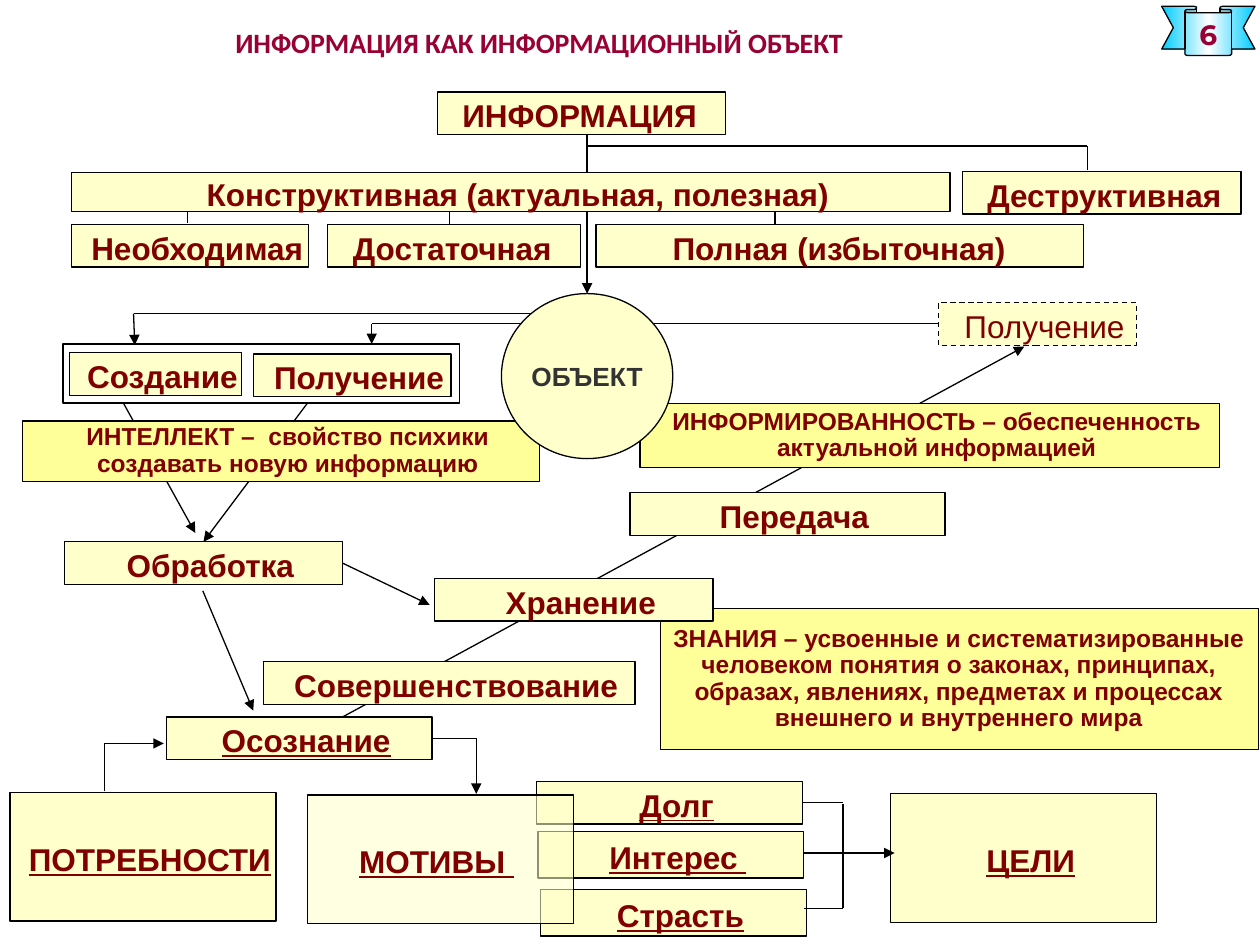
from copy import deepcopy
from dataclasses import dataclass

from lxml import etree
from pptx import Presentation
from pptx.dml.color import RGBColor
from pptx.enum.dml import MSO_LINE
from pptx.enum.shapes import MSO_CONNECTOR, MSO_SHAPE
from pptx.enum.text import MSO_ANCHOR, PP_ALIGN
from pptx.oxml.ns import qn
from pptx.util import Inches, Pt

RECTANGLE, OVAL, RIBBON = MSO_SHAPE.RECTANGLE, MSO_SHAPE.OVAL, MSO_SHAPE.DOWN_RIBBON
STRAIGHT, DASH = MSO_CONNECTOR.STRAIGHT, MSO_LINE.DASH
CENTER, LEFT, MIDDLE = PP_ALIGN.CENTER, PP_ALIGN.LEFT, MSO_ANCHOR.MIDDLE
TOP_SIDE, LEFT_SIDE, RIGHT_SIDE = 0, 1, 3


@dataclass(frozen=True)
class Theme:
    font: str = "Arial"
    title_font: str = "Calibri"
    number_font: str = "Montserrat"
    ink: str = "800000"
    accent: str = "990033"
    object_ink: str = "333333"
    line: str = "000000"
    box: str = "FFFFCC"
    definition: str = "FFFF99"
    ribbon: tuple = ("00CCFF", "FFFFFF", "00CCFF")
    heading_size: int = 16
    term_size: int = 18
    definition_size: int = 14
    object_size: int = 15
    line_width: float = 0.75


THEME = Theme()
INSETS = (0.13, 0.01, 0.02, 0.01)
DEFAULT_INSETS = (0.1, 0.05, 0.1, 0.05)
UNDERLINED = {"underline": True}
DEFINITION = {"fill": THEME.definition, "size": THEME.definition_size, "spacing": 0.9}


def shifted(right):
    return {"insets": (0.13, 0.01, right, 0.01)}


# name, text, (left, top, width, height), differences from a plain term box
BOXES = [
    ("necessary", "Необходимая", (0.57, 1.78, 1.88, 0.34), {}),
    ("sufficient", "Достаточная", (2.6, 1.78, 2.01, 0.34), shifted(0.16)),
    ("complete", "Полная (избыточная)", (4.73, 1.78, 3.87, 0.34), {"insets": (0.01, 0.01, 0.02, 0.01)}),
    ("receiving", "Получение", (2.01, 2.81, 1.57, 0.34), {}),
    ("processing", "Обработка", (0.51, 4.3, 2.21, 0.34), {}),
    ("improvement", "Совершенствование", (2.09, 5.25, 2.95, 0.34), {}),
    ("destructive", "Деструктивная", (7.64, 1.36, 2.21, 0.34), shifted(0.09)),
    ("awareness", "ИНФОРМИРОВАННОСТЬ – обеспеченность актуальной информацией",
     (5.08, 3.2, 4.6, 0.51), DEFINITION),
    ("knowledge", "ЗНАНИЯ – усвоенные и систематизированные человеком понятия о законах, "
     "принципах, образах, явлениях, предметах и процессах\nвнешнего и внутреннего мира",
     (5.24, 4.83, 4.75, 1.12), {**DEFINITION, "insets": (0.01, 0.01, 0.02, 0.01)}),
    ("information", "ИНФОРМАЦИЯ", (3.47, 0.73, 2.29, 0.34), shifted(0.16)),
    ("storage", "Хранение", (3.45, 4.59, 2.21, 0.34), {}),
    ("needs", "ПОТРЕБНОСТИ", (0.08, 6.29, 2.11, 1.02), UNDERLINED),
    ("duty", "Долг", (4.26, 6.2, 2.11, 0.34), UNDERLINED),
    ("interest", "Интерес ", (4.27, 6.6, 2.11, 0.37), UNDERLINED),
    ("goals", "ЦЕЛИ", (7.07, 6.3, 2.11, 1.02), UNDERLINED),
    ("passion", "Страсть", (4.29, 7.06, 2.11, 0.37), UNDERLINED),
    ("realization", "Осознание", (1.32, 5.69, 2.11, 0.34), UNDERLINED),
    ("motives", "МОТИВЫ ", (2.44, 6.31, 2.11, 1.02),
     {**UNDERLINED, "alpha": 56, "align": LEFT, "insets": (0.41, 0.01, 0.02, 0.01)}),
    ("intellect", "ИНТЕЛЛЕКТ –  свойство психики\nсоздавать новую информацию",
     (0.18, 3.34, 4.1, 0.48), DEFINITION),
    ("creation", "Создание", (0.55, 2.8, 1.37, 0.34), {}),
    ("frame", "", (0.5, 2.73, 3.15, 0.47), {"fill": None}),
    ("transfer", "Передача", (5, 3.91, 2.5, 0.34), {}),
    ("obtaining", "Получение", (7.45, 2.4, 1.57, 0.34), {"bold": False, "dash": DASH}),
    ("object", "ОБЪЕКТ", (3.98, 2.33, 1.36, 1.31),
     {"preset": OVAL, "size": THEME.object_size, "color": THEME.object_ink, "spacing": 1.0,
      "wrap": False, "insets": DEFAULT_INSETS}),
    ("constructive", "Конструктивная (актуальная, полезная)", (0.57, 1.37, 6.97, 0.31), {}),
]

# start, end, arrowhead, joined box at the start, joined box at the end
BACK_LINES = [
    ((2.44, 3.2), (1.61, 4.3), True, None, ("processing", TOP_SIDE)),
    ((0.98, 3.2), (1.55, 4.23), True, None, None),
    ((2.72, 5.69), (8.13, 2.75), True, None, None),
    ((1.49, 1.58), (1.49, 1.77), False, None, None),
    ((3.57, 1.61), (3.57, 1.8), False, None, None),
    ((6.15, 1.6), (6.15, 1.78), False, None, None),
    ((4.66, 0.83), (4.66, 2.33), True, None, ("object", TOP_SIDE)),
    ((7.45, 2.57), (2.95, 2.57), False, ("obtaining", LEFT_SIDE), None),
    ((1.06, 2.49), (4.29, 2.49), False, None, None),
]
FRONT_LINES = [
    ((1.06, 2.49), (1.07, 2.74), True, None, None),
    ((2.95, 2.57), (2.95, 2.73), True, None, None),
    ((2.72, 4.47), (3.41, 4.8), True, ("processing", RIGHT_SIDE), None),
    ((4.66, 1.16), (8.63, 1.16), False, None, None),
    ((8.63, 1.16), (8.63, 1.35), False, None, None),
    ((1.61, 4.69), (2.01, 5.64), True, None, None),
    ((0.83, 6.28), (0.83, 5.9), False, None, None),
    ((0.83, 5.9), (1.3, 5.9), True, None, None),
    ((3.43, 5.86), (3.78, 5.86), False, ("realization", RIGHT_SIDE), None),
    ((3.78, 5.86), (3.78, 6.3), True, None, None),
    ((6.69, 6.38), (6.69, 7.21), False, None, None),
    ((6.37, 6.37), (6.69, 6.37), False, ("duty", RIGHT_SIDE), None),
    ((6.38, 6.77), (7.1, 6.77), True, None, None),
    ((6.38, 7.21), (6.69, 7.21), False, None, None),
]


def rgb(value):
    return RGBColor.from_string(value)


def set_attributes(target, values):
    for name, value in values.items():
        setattr(target, name, value)


def write_text(shape, text, size, font=THEME.font, color=THEME.ink, bold=True, underline=False,
               align=CENTER, spacing=1.0, insets=DEFAULT_INSETS, wrap=True):
    left, top, right, bottom = map(Inches, insets)
    frame = shape.text_frame
    set_attributes(frame, {"margin_left": left, "margin_top": top, "margin_right": right,
                           "margin_bottom": bottom, "vertical_anchor": MIDDLE,
                           "word_wrap": wrap, "text": text})
    for paragraph in frame.paragraphs:
        set_attributes(paragraph, {"alignment": align, "line_spacing": spacing})
        for run in paragraph.runs:
            set_attributes(run.font, {"name": font, "size": Pt(size), "bold": bold,
                                      "underline": underline})
            run.font.color.rgb = rgb(color)


def style_line(line):
    line.color.rgb = rgb(THEME.line)
    line.width = Pt(THEME.line_width)


def add_box(slide, text, place, preset=RECTANGLE, fill=THEME.box, alpha=None, dash=None,
            size=THEME.term_size, spacing=1.1, insets=INSETS, **text_format):
    shape = slide.shapes.add_shape(preset, *map(Inches, place))
    shape.shadow.inherit = False
    style_line(shape.line)
    if dash:
        shape.line.dash_style = dash
    if fill:
        shape.fill.solid()
        shape.fill.fore_color.rgb = rgb(fill)
    else:
        shape.fill.background()
    if alpha:
        color = shape._element.spPr.find(qn("a:solidFill"))[0]
        etree.SubElement(color, qn("a:alpha"), val=str(alpha * 1000))
    if text:
        write_text(shape, text, size, spacing=spacing, insets=insets, **text_format)
    return shape


def add_line(slide, start, end, arrow):
    connector = slide.shapes.add_connector(STRAIGHT, *map(Inches, start + end))
    style_line(connector.line)
    if arrow:
        etree.SubElement(connector.line._get_or_add_ln(), qn("a:tailEnd"), type="triangle")
    etree.SubElement(connector._element.spPr, qn("a:effectLst"))
    return connector


def add_title(slide, text):
    title = slide.shapes.add_textbox(*map(Inches, (0, 0.13, 8.56, 0.44)))
    write_text(title, text, THEME.heading_size, THEME.title_font, THEME.accent, spacing=0.9)


def add_number_ribbon(slide, number):
    ribbon = add_box(slide, number, (9.22, 0.05, 0.74, 0.39), RIBBON, size=THEME.heading_size,
                     font=THEME.number_font, color=THEME.accent, spacing=1.0,
                     insets=DEFAULT_INSETS, wrap=False)
    ribbon.adjustments[0], ribbon.adjustments[1] = 0.13, 0.5
    ribbon.fill.gradient()
    ribbon.fill.gradient_angle = 0
    stop_list = ribbon._element.spPr.find(qn("a:gradFill")).find(qn("a:gsLst"))
    stop_list.append(deepcopy(stop_list[0]))
    for index, (stop, color) in enumerate(zip(ribbon.fill.gradient_stops, THEME.ribbon)):
        stop.color.rgb = rgb(color)
        stop.position = index / 2


def main():
    presentation = Presentation()
    presentation.slide_width, presentation.slide_height = Inches(10), Inches(7.5)
    slide = presentation.slides.add_slide(presentation.slide_layouts[6])
    add_title(slide, "ИНФОРМАЦИЯ КАК ИНФОРМАЦИОННЫЙ ОБЪЕКТ")
    add_number_ribbon(slide, "6")

    connectors = [add_line(slide, *line[:3]) for line in BACK_LINES]
    boxes = {name: add_box(slide, text, place, **options) for name, text, place, options in BOXES}
    connectors += [add_line(slide, *line[:3]) for line in FRONT_LINES]
    for connector, (*_, begin, end) in zip(connectors, BACK_LINES + FRONT_LINES):
        if begin:
            connector.begin_connect(boxes[begin[0]], begin[1])
        if end:
            connector.end_connect(boxes[end[0]], end[1])
    presentation.save("out.pptx")


if __name__ == "__main__":
    main()
